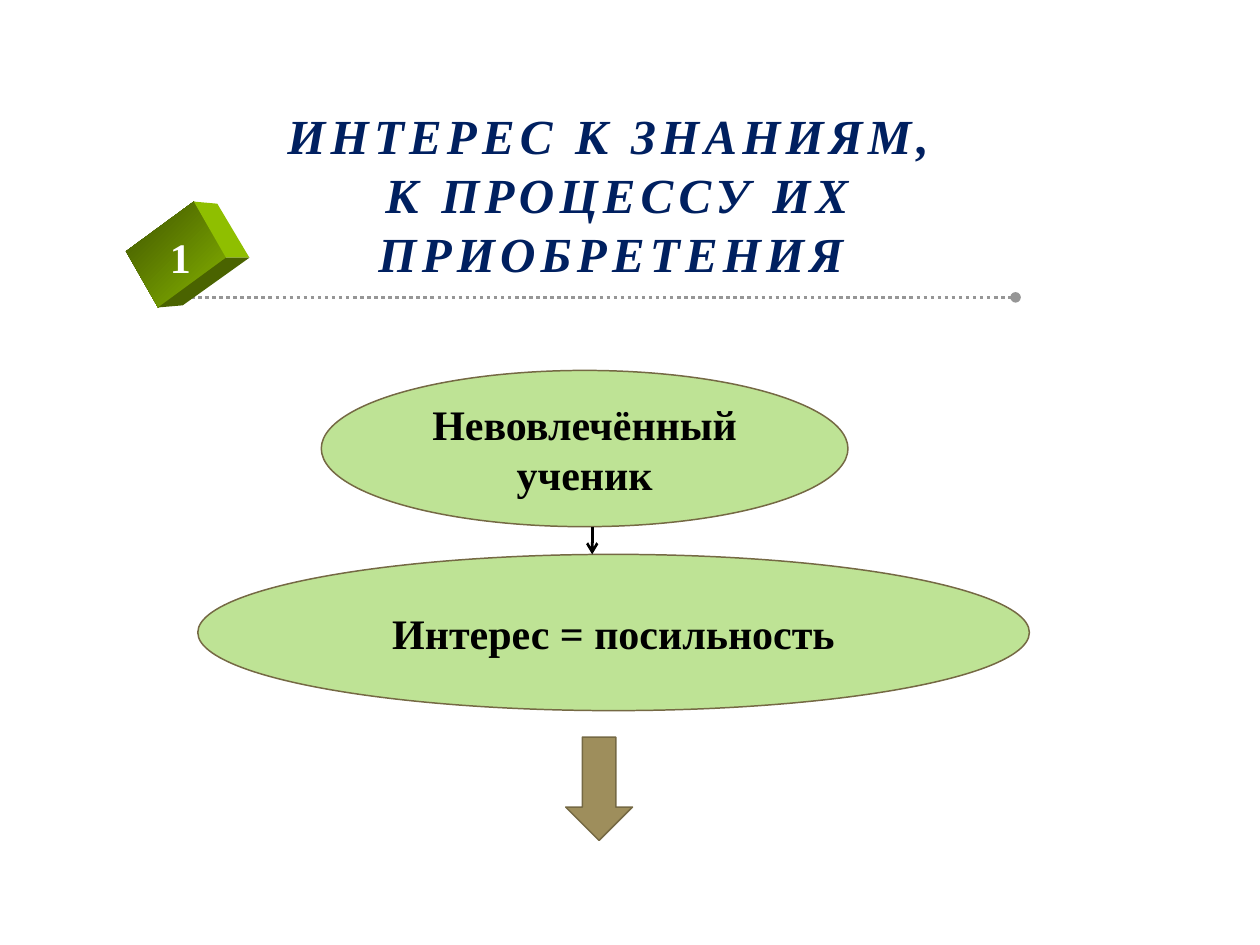
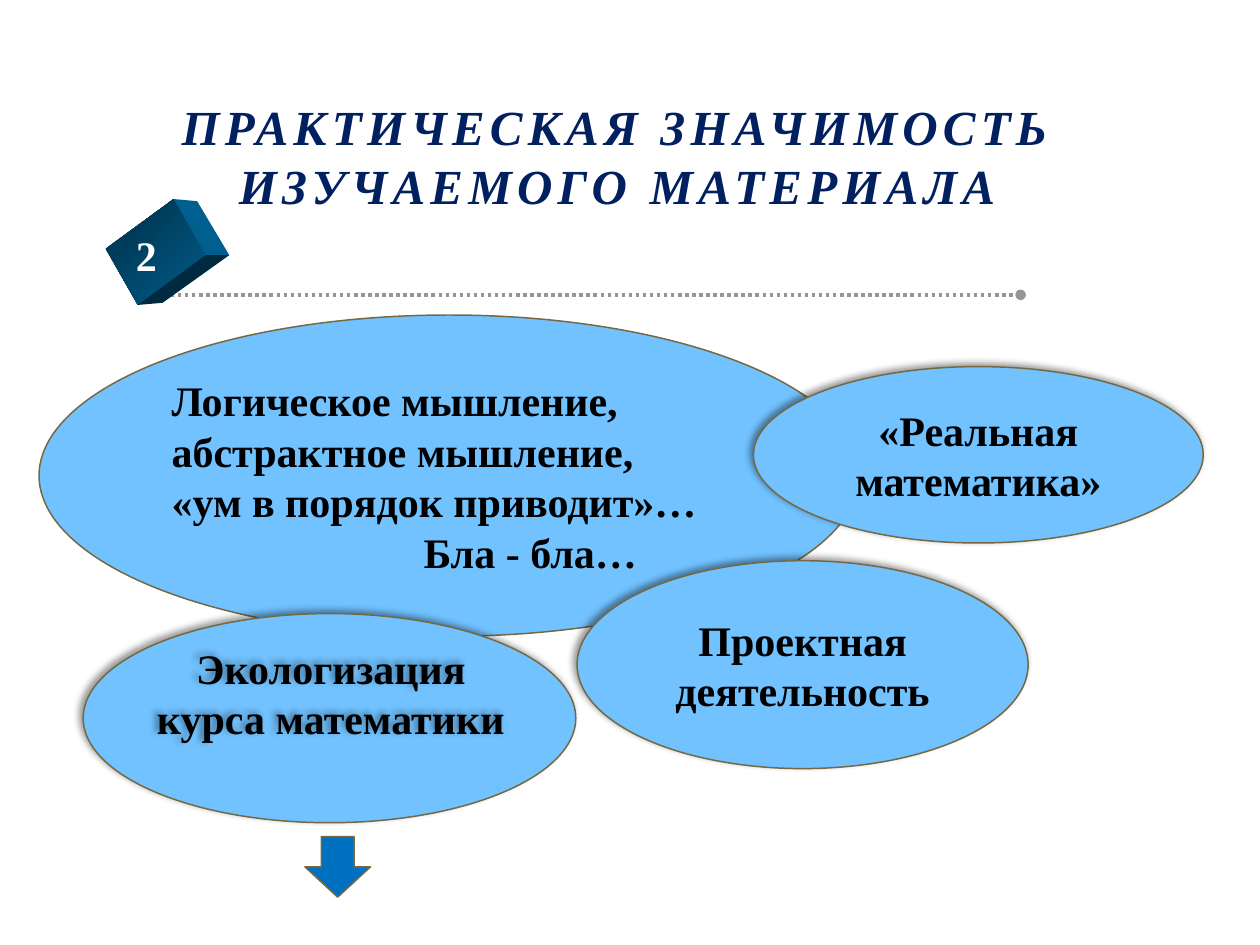
from dataclasses import dataclass

from lxml.etree import SubElement
from pptx import Presentation
from pptx.dml.color import RGBColor
from pptx.enum.dml import MSO_LINE
from pptx.enum.shapes import MSO_CONNECTOR, MSO_SHAPE
from pptx.enum.text import MSO_ANCHOR, MSO_AUTO_SIZE, PP_ALIGN
from pptx.oxml.ns import qn
from pptx.util import Inches, Pt

SLIDE_WIDTH, SLIDE_HEIGHT = Inches(10), Inches(7.5)
COLUMNS, ROWS = 100, 75
FONT = "Times New Roman"
COLORS = {
    "title": "002060",
    "rule": "969696",
    "text": "000000",
    "number": "FFFFFF",
    "outline": "756944",
    "interest": "BEE395",
    "practice": "71C2FF",
    "interest_arrow": "9E8E5C",
    "practice_arrow": "0070C0",
}
GREEN_BLOCK = {"dark": "3F5500", "light": "87B400", "side": "8FBF00", "base": "4A6300"}
BLUE_BLOCK = {"dark": "002F47", "light": "005C8A", "side": "005F8F", "base": "002A40"}
BLOCK_FACES = {
    "front": [(0, 0.47), (0.55, 0), (0.81, 0.53), (0.26, 1)],
    "side": [(0.55, 0), (0.74, 0.02), (1, 0.53), (0.81, 0.53)],
    "base": [(0.26, 1), (0.81, 0.53), (1, 0.53), (0.46, 0.98)],
}


def across(columns):
    return round(columns * SLIDE_WIDTH / COLUMNS)


def down(rows):
    return round(rows * SLIDE_HEIGHT / ROWS)


@dataclass
class Box:
    left: float
    top: float
    width: float
    height: float

    def inner(self, column, row, width, height):
        return Box(self.left + column, self.top + row, width, height)

    def place(self):
        return across(self.left), down(self.top), across(self.width), down(self.height)

    def point(self, x_share, y_share):
        return (across(self.left + x_share * self.width),
                down(self.top + y_share * self.height))


def rgb(color):
    return RGBColor.from_string(color)


def format_text(frame, size, color, align=None):
    for paragraph in frame.paragraphs:
        if align is not None:
            paragraph.alignment = align
        for run in paragraph.runs:
            run.font.name = FONT
            run.font.size = Pt(size)
            run.font.bold = True
            run.font.color.rgb = rgb(color)


def add_shadow(shape):
    effects = shape._element.spPr.find(qn("a:effectLst"))
    if effects is None:
        effects = SubElement(shape._element.spPr, qn("a:effectLst"))
    shadow = SubElement(effects, qn("a:outerShdw"), blurRad=str(Pt(4)),
                        dist=str(Pt(3)), dir=str(225 * 60000), rotWithShape="0")
    tint = SubElement(shadow, qn("a:srgbClr"), val=COLORS["text"])
    SubElement(tint, qn("a:alpha"), val="40000")


def add_line(slide, start, end, color, width, ending, dash=None):
    line = slide.shapes.add_connector(MSO_CONNECTOR.STRAIGHT, *start, *end)
    line.line.color.rgb = rgb(color)
    line.line.width = Pt(width)
    if dash is not None:
        line.line.dash_style = dash
    SubElement(line.line._get_or_add_ln(), qn("a:tailEnd"), type=ending)
    SubElement(line._element.spPr, qn("a:effectLst"))


def add_outlined(slide, kind, box, color):
    outlined = slide.shapes.add_shape(kind, *box.place())
    outlined.shadow.inherit = False
    outlined.fill.solid()
    outlined.fill.fore_color.rgb = rgb(color)
    outlined.line.color.rgb = rgb(COLORS["outline"])
    outlined.line.width = Pt(0.85)
    return outlined


def add_idea(slide, box, color, text="", align=PP_ALIGN.CENTER, shadow=False):
    idea = add_outlined(slide, MSO_SHAPE.OVAL, box, color)
    if shadow:
        add_shadow(idea)
    if text:
        frame = idea.text_frame
        frame.text = text
        frame.word_wrap = True
        frame.vertical_anchor = MSO_ANCHOR.MIDDLE
        format_text(frame, 24, COLORS["text"], align)
    return idea


def add_title(slide, box, text):
    title = slide.shapes.title
    title.left, title.top, title.width, title.height = box.place()
    frame = title.text_frame
    frame.text = text
    frame.word_wrap = True
    frame.auto_size = MSO_AUTO_SIZE.NONE
    frame.vertical_anchor = MSO_ANCHOR.BOTTOM
    format_text(frame, 28, COLORS["title"], PP_ALIGN.CENTER)
    for run in frame.paragraphs[0].runs:
        run.font.italic = True
        run.font._element.set("spc", "300")


def add_block(slide, box, palette):
    for face, corners in BLOCK_FACES.items():
        points = [box.point(*corner) for corner in corners]
        builder = slide.shapes.build_freeform(*points[0])
        builder.add_line_segments(points[1:])
        side = builder.convert_to_shape()
        side.shadow.inherit = False
        side.line.fill.background()
        if face == "front":
            side.fill.gradient()
            side.fill.gradient_angle = 315
            for stop, shade in zip(side.fill.gradient_stops, ("dark", "light")):
                stop.color.rgb = rgb(palette[shade])
        else:
            side.fill.solid()
            side.fill.fore_color.rgb = rgb(palette[face])


def add_numbered_rule(slide, box, number, number_offset, palette):
    rule = box.inner(4.6, 7.6, box.width - 4.6, 0)
    add_line(slide, rule.point(0, 0), rule.point(1, 0), COLORS["rule"], 2,
             "oval", MSO_LINE.ROUND_DOT)
    add_block(slide, box.inner(0, 0, 9.8, box.height), palette)
    label = slide.shapes.add_textbox(*box.inner(number_offset, 1.9, 4.9, 5).place())
    label.text_frame.text = number
    label.text_frame.word_wrap = False
    format_text(label.text_frame, 24, COLORS["number"])


def add_interest_chain(slide, box):
    oval_height = 12.4
    add_idea(slide, box.inner(0, box.height - oval_height, box.width, oval_height),
             COLORS["interest"], "Интерес = посильность")
    add_idea(slide, box.inner(9.8, 0, 41.8, oval_height),
             COLORS["interest"], "Невовлечённый ученик")
    link = box.inner(31.3, oval_height, 0, box.height - 2 * oval_height)
    add_line(slide, link.point(0, 0), link.point(0, 1), COLORS["text"], 1.5, "arrow")


def add_practice_cluster(slide, box):
    fill = COLORS["practice"]
    thinking = add_idea(
        slide, box.inner(0, 0, 65.1, 25.5), fill,
        "Логическое мышление, абстрактное мышление,\n"
        "«ум в порядок приводит»…\nБла - бла…", PP_ALIGN.LEFT)
    thinking.text_frame.paragraphs[-1]._p.get_or_add_pPr().set("marL", str(Inches(2)))
    add_idea(slide, box.inner(56.7, 4.1, 35.7, 14), fill,
             "«Реальная математика»", shadow=True)
    add_idea(slide, box.inner(42.7, 19.5, 35.8, 16.5), fill,
             "Проектная деятельность", shadow=True)
    add_idea(slide, box.inner(3.5, 23.7, 39.1, 16.6), fill, shadow=True)
    ecology = slide.shapes.add_textbox(*box.inner(7.9, 25.5, 30.5, 13.1).place())
    ecology.text_frame.text = "Экологизация курса математики"
    ecology.text_frame.word_wrap = True
    format_text(ecology.text_frame, 24, COLORS["text"], PP_ALIGN.CENTER)
    add_shadow(ecology)


def build_interest_slide(slide):
    add_title(slide, Box(14.3, 1.3, 68.4, 21.6),
              "ИНТЕРЕС К ЗНАНИЯМ,\v К ПРОЦЕССУ ИХ ПРИОБРЕТЕНИЯ")
    add_numbered_rule(slide, Box(10, 16, 70.6, 8.4), "1", 2.5, GREEN_BLOCK)
    add_interest_chain(slide, Box(15.7, 29.4, 66, 27))
    add_outlined(slide, MSO_SHAPE.DOWN_ARROW, Box(44.9, 58.5, 5.3, 8.2),
                 COLORS["interest_arrow"])


def build_practice_slide(slide):
    add_title(slide, Box(9.8, 5.3, 78.4, 12.2),
              "ПРАКТИЧЕСКАЯ ЗНАЧИМОСТЬ ИЗУЧАЕМОГО МАТЕРИАЛА")
    add_numbered_rule(slide, Box(8.4, 15.8, 72.6, 8.4), "2", 1.4, BLUE_BLOCK)
    add_practice_cluster(slide, Box(3.1, 25, 92.4, 40.3))
    add_outlined(slide, MSO_SHAPE.DOWN_ARROW, Box(24.2, 66.4, 5.2, 4.8),
                 COLORS["practice_arrow"])


def main():
    presentation = Presentation()
    presentation.slide_width = SLIDE_WIDTH
    presentation.slide_height = SLIDE_HEIGHT
    title_only = presentation.slide_layouts[5]
    for build in (build_interest_slide, build_practice_slide):
        build(presentation.slides.add_slide(title_only))
    presentation.save("out.pptx")


if __name__ == "__main__":
    main()
